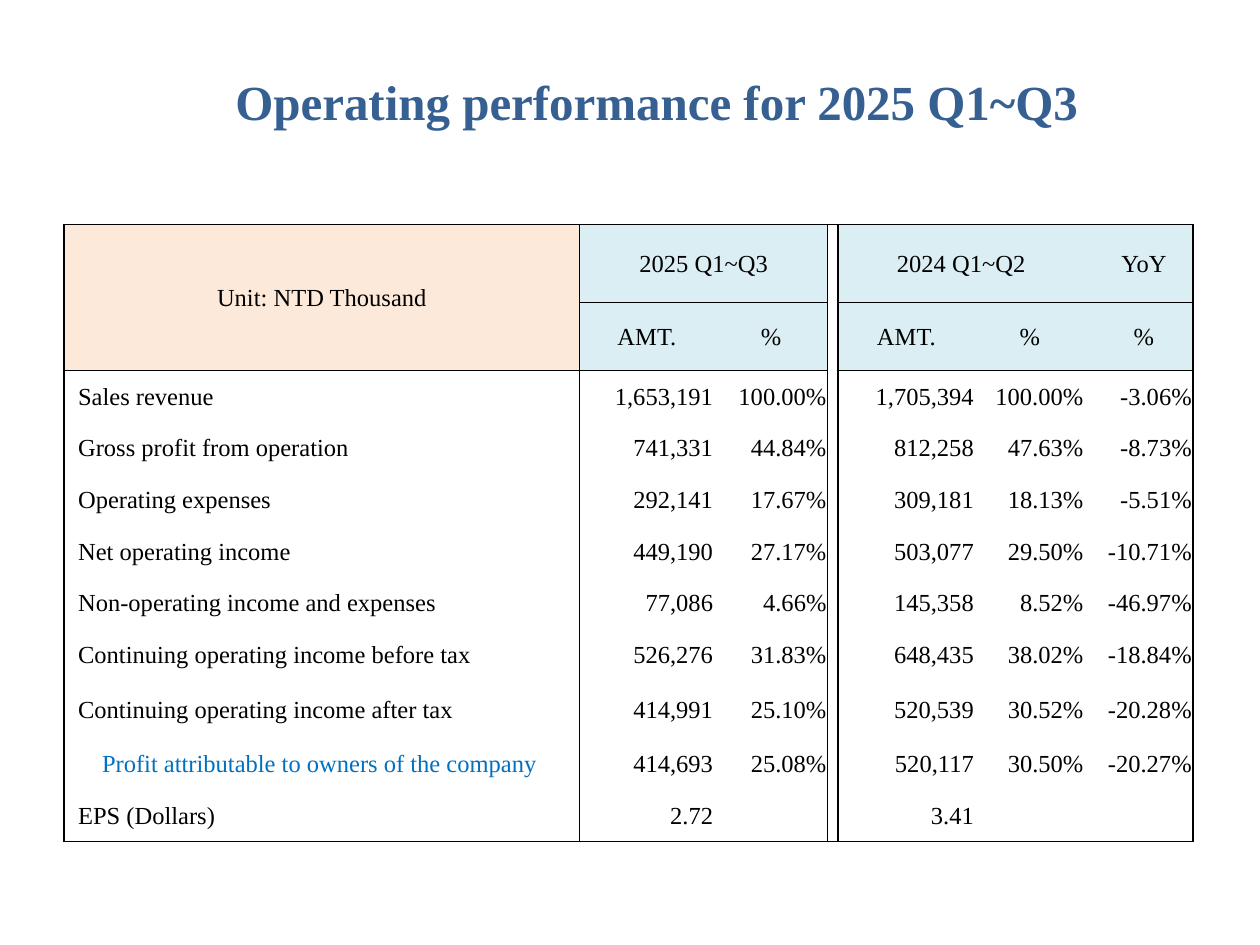
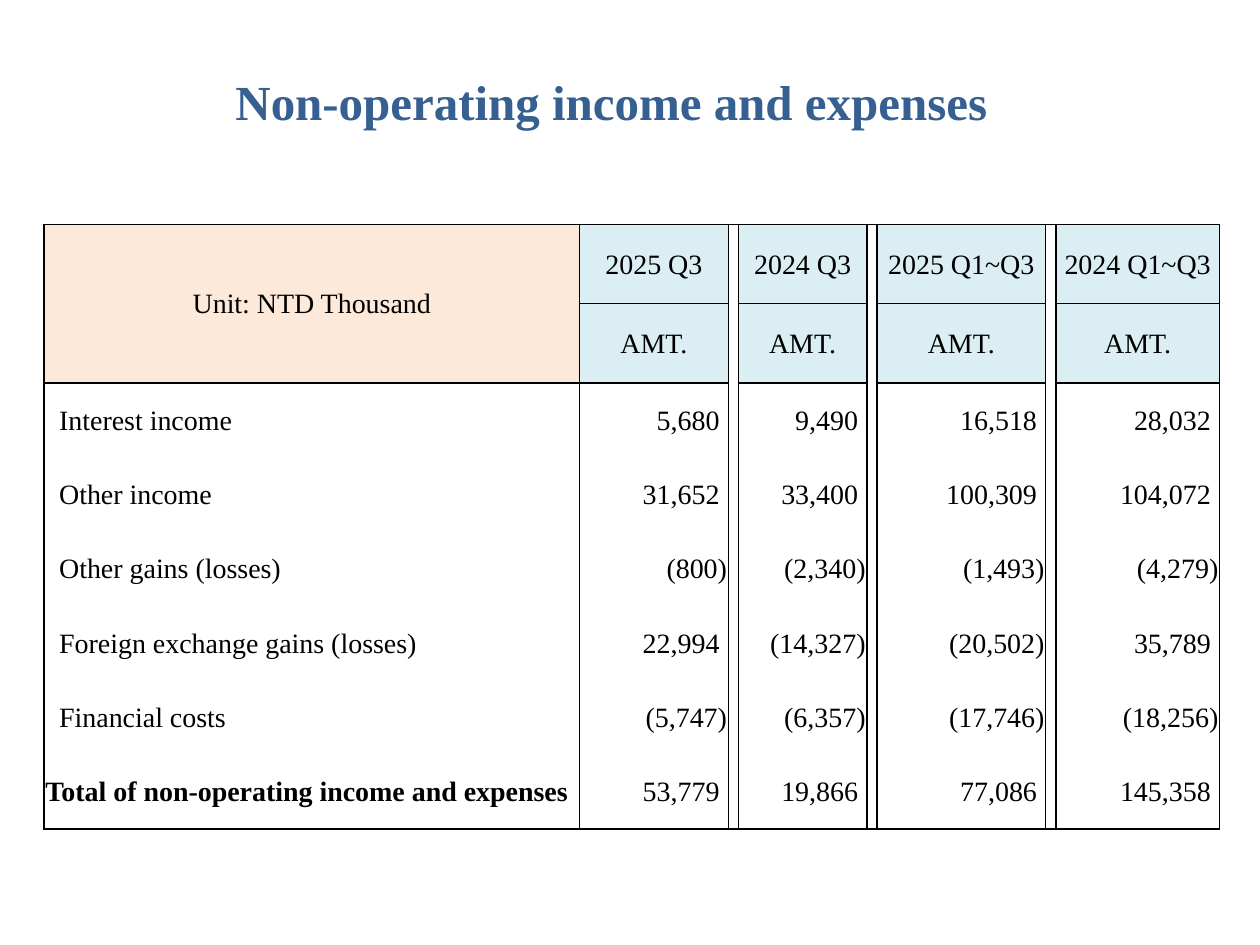
from lxml import etree
from pptx import Presentation
from pptx.dml.color import RGBColor
from pptx.enum import text
from pptx.oxml.ns import qn
from pptx.util import Inches, Pt

FONT = "Times New Roman"
NAVY, BLUE, BLACK = "376092", "0070C0", "000000"
PEACH, PALE_BLUE = "FDE9D9", "DBEEF3"
HEADER_ROWS = 2


def add_run(paragraph, wording, size, color, bold=False):
    run = paragraph.add_run()
    run.text = wording
    run.font.name = FONT
    run.font.size = Pt(size)
    run.font.bold = bold
    run.font.color.rgb = RGBColor.from_string(color)


def set_border(cell, side, ruled):
    line = etree.SubElement(cell._tc.get_or_add_tcPr(), qn(f"a:{side}"), w=str(Pt(1)))
    if ruled:
        fill = etree.SubElement(line, qn("a:solidFill"))
        etree.SubElement(fill, qn("a:srgbClr"), val=BLACK)
    else:
        etree.SubElement(line, qn("a:noFill"))


performance = {
    "title": "Operating performance for 2025 Q1~Q3",
    "title_size": (7.4, 0.57),
    "left": 0.51,
    "size": 14,
    "indent": 0.11,
    "positive_pad": 0.01,
    "columns": [4.09, 1.07, 0.9, 0.08, 1.09, 0.87, 0.08, 0.78],
    "rows": [0.62, 0.54] + [0.41] * 6 + [0.46, 0.41, 0.41],
    "gaps": {3},
    "edges": {0, 1, 3, 4, 8},
    "merges": [(0, 1, 0, 2), (0, 4, 0, 5)],
    "lines": [
        ["Unit: NTD Thousand", "2025 Q1~Q3", "", "", "2024 Q1~Q2", "", "", "YoY"],
        ["", "AMT.", "%", "", "AMT.", "%", "", "%"],
        ["Sales revenue", "1,653,191", "100.00%", "", "1,705,394", "100.00%", "", "-3.06%"],
        ["Gross profit from operation", "741,331", "44.84%", "", "812,258", "47.63%", "", "-8.73%"],
        ["Operating expenses", "292,141", "17.67%", "", "309,181", "18.13%", "", "-5.51%"],
        ["Net operating income", "449,190", "27.17%", "", "503,077", "29.50%", "", "-10.71%"],
        ["Non-operating income and expenses", "77,086", "4.66%", "", "145,358", "8.52%", "", "-46.97%"],
        ["Continuing operating income before tax", "526,276", "31.83%", "", "648,435", "38.02%", "", "-18.84%"],
        ["Continuing operating income after tax", "414,991", "25.10%", "", "520,539", "30.52%", "", "-20.28%"],
        ["Profit attributable to owners of the company", "414,693", "25.08%", "", "520,117", "30.50%", "", "-20.27%"],
        ["EPS (Dollars)", "2.72", "", "", "3.41", "", "", ""],
    ],
}

non_operating = {
    "title": "Non-operating income and expenses",
    "title_size": (8.11, 0.96),
    "left": 0.35,
    "size": 16,
    "indent": 0.12,
    "positive_pad": 0.07,
    "columns": [4.25, 1.18, 0.08, 1.02, 0.08, 1.34, 0.08, 1.3],
    "rows": [0.63] * 2 + [0.59] * 6,
    "gaps": {2, 4, 6},
    "edges": set(range(9)),
    "merges": [],
    "lines": [
        ["Unit: NTD Thousand", "2025 Q3", "", "2024 Q3", "", "2025 Q1~Q3", "", "2024 Q1~Q3"],
        ["", "AMT.", "", "AMT.", "", "AMT.", "", "AMT."],
        ["Interest income", "5,680", "", "9,490", "", "16,518", "", "28,032"],
        ["Other income", "31,652", "", "33,400", "", "100,309", "", "104,072"],
        ["Other gains (losses)", "(800)", "", "(2,340)", "", "(1,493)", "", "(4,279)"],
        ["Foreign exchange gains (losses)", "22,994", "", "(14,327)", "", "(20,502)", "", "35,789"],
        ["Financial costs", "(5,747)", "", "(6,357)", "", "(17,746)", "", "(18,256)"],
        ["Total of non-operating income and expenses", "53,779", "", "19,866", "", "77,086", "", "145,358"],
    ],
}

deck = Presentation()
deck.slide_width, deck.slide_height = Inches(10), Inches(7.5)

for statement in (performance, non_operating):
    slide = deck.slides.add_slide(deck.slide_layouts[6])
    width, height = statement["title_size"]
    heading = slide.shapes.add_textbox(Inches(1.77), Inches(0.52), Inches(width), Inches(height)).text_frame
    heading.word_wrap = True
    add_run(heading.paragraphs[0], statement["title"], 28, NAVY, True)

    columns, rows, lines = statement["columns"], statement["rows"], statement["lines"]
    table = slide.shapes.add_table(
        len(rows), len(columns), Inches(statement["left"]), Inches(1.78),
        Inches(sum(columns)), Inches(sum(rows))).table
    table.first_row = table.horz_banding = False
    for column, width in zip(table.columns, columns):
        column.width = Inches(width)
    for row, height in zip(table.rows, rows):
        row.height = Inches(height)

    for r, line in enumerate(lines):
        for c, wording in enumerate(line):
            cell = table.cell(r, c)
            is_header, is_gap = r < HEADER_ROWS, c in statement["gaps"]
            cell.vertical_anchor = text.MSO_ANCHOR.MIDDLE
            cell.margin_left = cell.margin_right = cell.margin_top = Inches(0.01)
            cell.margin_bottom = 0

            ruled_rows = {0, len(rows)}
            if not is_gap:
                ruled_rows |= {HEADER_ROWS} if c == 0 else {1, HEADER_ROWS}
            set_border(cell, "lnL", c in statement["edges"])
            set_border(cell, "lnR", c + 1 in statement["edges"])
            set_border(cell, "lnT", r in ruled_rows)
            set_border(cell, "lnB", r + 1 in ruled_rows or (r == 0 and c == 0))

            if is_header and not is_gap:
                cell.fill.solid()
                cell.fill.fore_color.rgb = RGBColor.from_string(PEACH if c == 0 else PALE_BLUE)
            else:
                cell.fill.background()

            paragraph = cell.text_frame.paragraphs[0]
            paragraph.font.size = Pt(statement["size"])
            if not wording:
                continue
            is_total = wording.startswith("Total")
            is_share = wording.startswith("Profit attributable")
            if is_header:
                paragraph.alignment = text.PP_ALIGN.CENTER
            elif c == 0:
                paragraph.alignment = text.PP_ALIGN.LEFT
                indent = 0.01 if is_total else 0.3 if is_share else statement["indent"]
                cell.margin_left = Inches(indent)
            else:
                paragraph.alignment = text.PP_ALIGN.RIGHT
                if not wording.endswith(")"):
                    cell.margin_right = Inches(statement["positive_pad"])
            add_run(paragraph, wording, statement["size"], BLUE if is_share else BLACK, is_total)

    for top, left, bottom, right in [(0, 0, 1, 0)] + statement["merges"]:
        table.cell(top, left).merge(table.cell(bottom, right))

deck.save("out.pptx")
